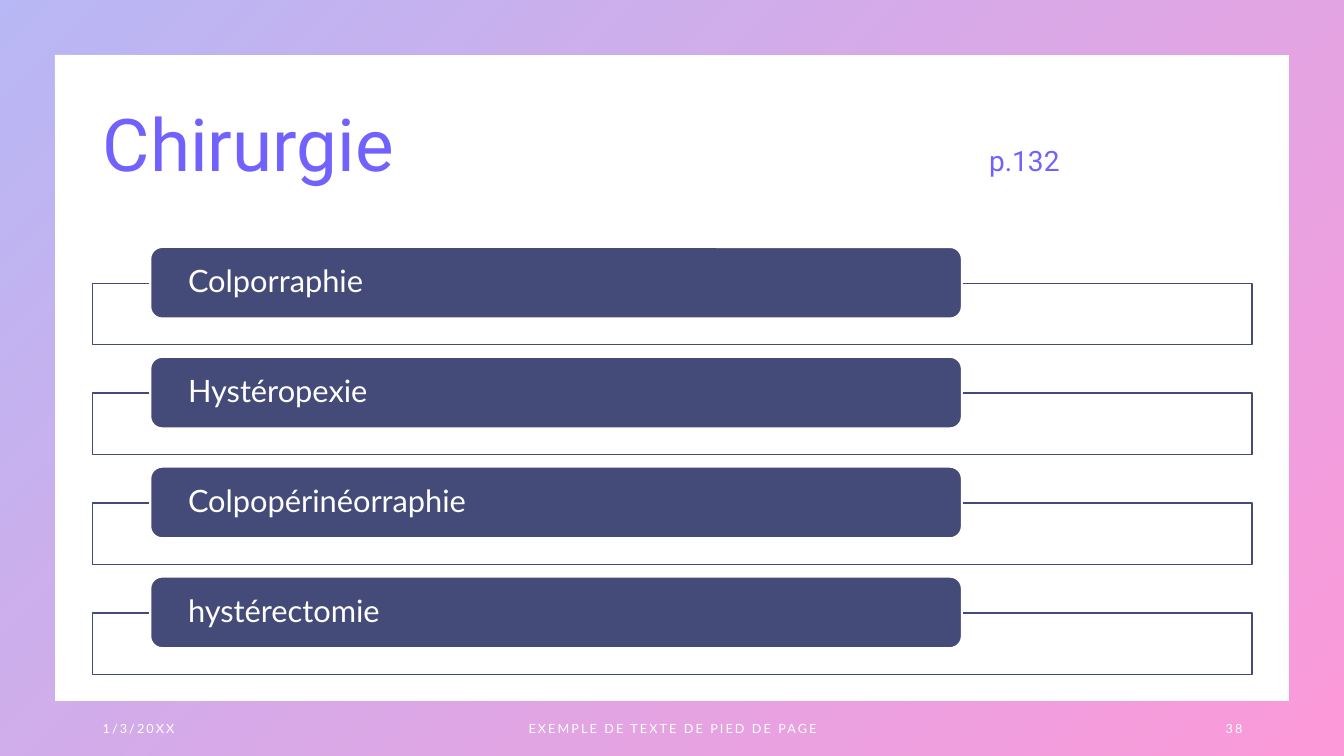
from lxml.etree import SubElement
from pptx import Presentation
from pptx.dml.color import RGBColor
from pptx.enum.shapes import MSO_SHAPE as SHAPE
from pptx.enum.text import MSO_ANCHOR as ANCHOR, PP_ALIGN as ALIGN
from pptx.oxml.ns import qn
from pptx.util import Inches, Pt

COLORS = {"violet": "7162FE", "navy": "454B78", "white": "FFFFFF",
          "frame_start": "4D4EE6", "frame_end": "F900A0"}
OPERATIONS = ["Colporraphie", "Hystéropexie", "Colpopérinéorraphie", "hystérectomie"]
ROW_PITCH = 1.09


def rgb(name):
    return RGBColor.from_string(COLORS[name])


def set_opacity(fill_element, percent):
    for color in fill_element.iter(qn("a:srgbClr")):
        SubElement(color, qn("a:alpha"), val=str(percent * 1000))


def style_run(run, font, size, color):
    run.font.name = font
    run.font.size = Pt(size)
    run.font.color.rgb = rgb(color)


def add_panel(slide, kind, box, fill, line, weight):
    panel = slide.shapes.add_shape(kind, *map(Inches, box))
    panel.shadow.inherit = False
    panel.fill.solid()
    panel.fill.fore_color.rgb = rgb(fill)
    panel.line.color.rgb = rgb(line)
    panel.line.width = Pt(weight)
    return panel


# Gradient border around the slide
def add_frame(slide, box):
    border = slide.shapes.add_shape(SHAPE.FRAME, *map(Inches, box))
    border.adjustments[0] = 0.072
    border.shadow.inherit = False
    border.line.fill.background()
    border.fill.gradient()
    border.fill.gradient_angle = 315
    for stop, color in zip(border.fill.gradient_stops, ("frame_start", "frame_end")):
        stop.color.rgb = rgb(color)
    set_opacity(border.fill._xPr.find(qn("a:gradFill")), 40)


# Title with the page reference at a tab stop
def add_title(slide, box):
    title = slide.shapes.title
    title.left, title.top, title.width, title.height = map(Inches, box)
    frame = title.text_frame
    frame.vertical_anchor = ANCHOR.MIDDLE
    frame.word_wrap = True
    heading = frame.paragraphs[0]
    heading.alignment = ALIGN.LEFT
    heading.line_spacing = 0.9
    for text, size in (("Chirurgie\t", 52), ("p.132", 20)):
        run = heading.add_run()
        run.text = text
        style_run(run, "Roboto", size, "violet")
    tabs = SubElement(heading._p.get_or_add_pPr(), qn("a:tabLst"))
    SubElement(tabs, qn("a:tab"), pos=str(Inches(8.79)), algn="l")


# One operation: outlined band with a label bar over it
def add_operation(slide, box, name):
    left, top, width, height = box
    band = add_panel(slide, SHAPE.RECTANGLE, (left, top + 0.36, width, height),
                     "white", "navy", 1)
    set_opacity(band.fill._xPr.find(qn("a:solidFill")), 90)

    label = add_panel(slide, SHAPE.ROUNDED_RECTANGLE,
                      (left + 0.57, top, width * 0.7, 0.71), "navy", "white", 1.5)
    frame = label.text_frame
    frame.text = name
    frame.word_wrap = True
    frame.vertical_anchor = ANCHOR.MIDDLE
    frame.margin_left = frame.margin_right = Inches(0.34)
    frame.margin_top = frame.margin_bottom = 0
    line = frame.paragraphs[0]
    line.alignment = ALIGN.LEFT
    line.line_spacing = 0.9
    style_run(line.runs[0], "Lato", 22, "white")


def add_operations(slide, box):
    left, top, width, height = box
    for row, name in enumerate(OPERATIONS):
        add_operation(slide, (left, top + row * ROW_PITCH, width, height), name)


# Date, footer and page number
def add_footer(slide, box):
    left, top, width, height = box
    entries = [("1/3/20XX", 0, 3, ALIGN.LEFT),
               ("EXEMPLE DE TEXTE DE PIED DE PAGE", (width - 4.5) / 2, 4.5, ALIGN.CENTER),
               ("38", width - 3, 3, ALIGN.RIGHT)]
    for text, offset, entry_width, alignment in entries:
        entry = slide.shapes.add_textbox(Inches(left + offset), Inches(top),
                                         Inches(entry_width), Inches(height))
        frame = entry.text_frame
        frame.text = text
        frame.word_wrap = True
        frame.vertical_anchor = ANCHOR.MIDDLE
        line = frame.paragraphs[0]
        line.alignment = alignment
        line.space_after = Pt(6)
        style_run(line.runs[0], "Lato", 9, "white")
        line.runs[0].font._element.set("spc", "150")


def main():
    deck = Presentation()
    deck.slide_width, deck.slide_height = Inches(13.33), Inches(7.5)
    slide = deck.slides.add_slide(deck.slide_layouts[5])
    add_frame(slide, (0, 0, 13.33, 7.5))
    add_title(slide, (0.92, 0.74, 11.5, 1.45))
    add_footer(slide, (0.92, 7.03, 11.5, 0.4))
    add_operations(slide, (0.92, 2.45, 11.5, 0.61))
    deck.save("out.pptx")


if __name__ == "__main__":
    main()
